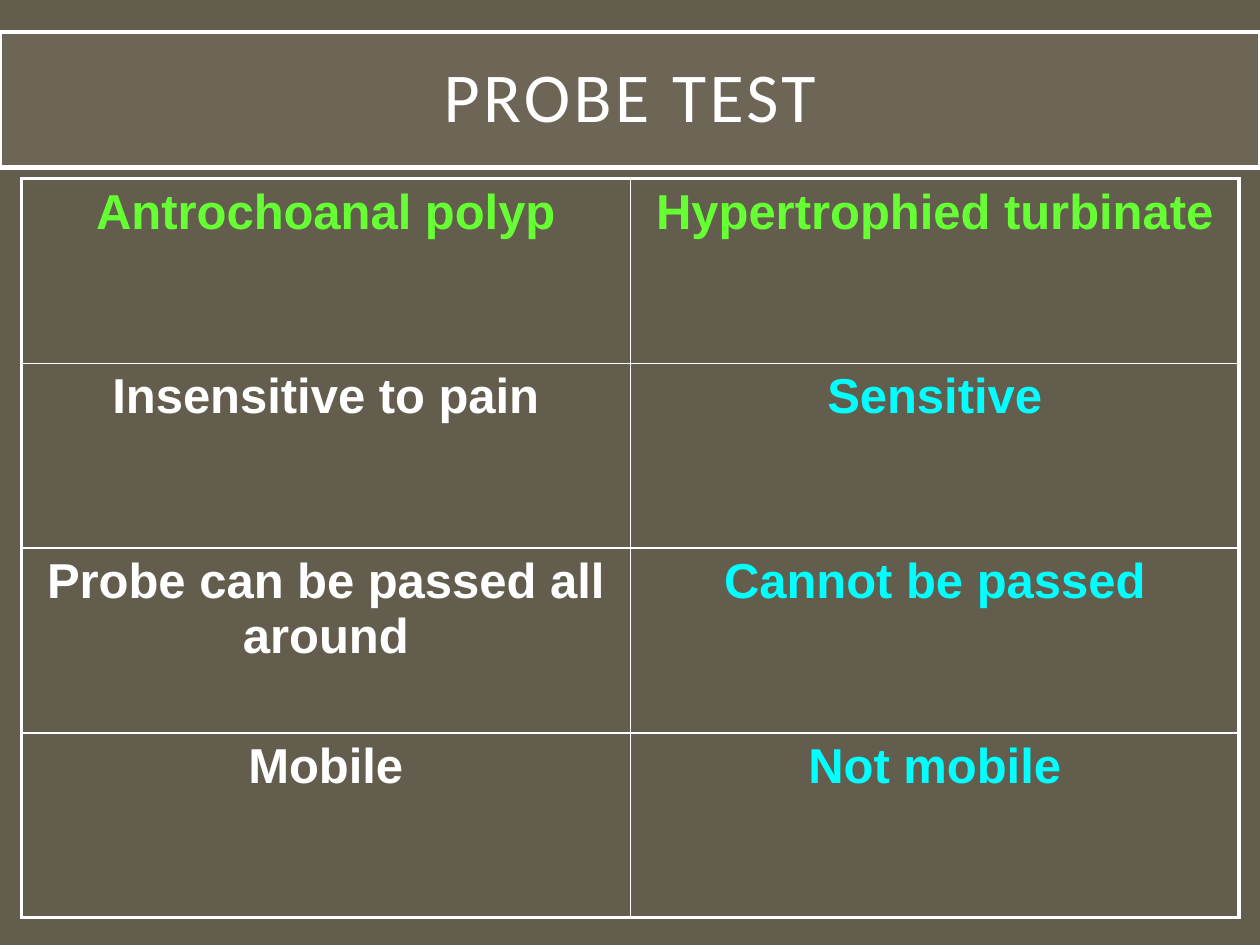
from lxml.etree import SubElement as Sub
from pptx import Presentation
from pptx.dml.color import RGBColor as RGB
from pptx.enum.text import MSO_ANCHOR as Anchor, MSO_AUTO_SIZE as Auto, PP_ALIGN as Align
from pptx.oxml import parse_xml
from pptx.oxml.ns import nsdecls, qn
from pptx.util import Cm, Pt

BACK = RGB(0x63, 0x5D, 0x4D)
BAND = RGB(0xA7, 0xA0, 0x8E)
WHITE = RGB(0xFF, 0xFF, 0xFF)
GREEN = RGB(0x66, 0xFF, 0x33)
CYAN = RGB(0x00, 0xFF, 0xFF)
THICK, THIN = 2.25, 1

ROWS = [
    ("Antrochoanal polyp", "Hypertrophied turbinate"),
    ("Insensitive to pain", "Sensitive"),
    ("Probe can be passed all around", "Cannot be passed"),
    ("Mobile", "Not mobile"),
]


def write(frame, text, font="Arial", size=28, color=WHITE, bold=False,
          track=0, lead=None):
    """Put one centred paragraph into a text frame."""
    para = frame.paragraphs[0]
    para.alignment = Align.CENTER
    para.space_before = Pt(0)
    para.line_spacing = lead
    run = para.add_run()
    run.text = text
    run.font.name = font
    run.font.size = Pt(size)
    run.font.bold = bold
    run.font.color.rgb = color
    if track:
        run.font._element.set("spc", str(track * 100))


def edge(cell, sides):
    """Draw the cell borders; sides maps L, R, T, B to widths in points."""
    props = cell._tc.get_or_add_tcPr()
    for spot, side in enumerate("LRTB"):
        props.insert(spot, parse_xml(
            f'<a:ln{side} {nsdecls("a")} w="{Pt(sides[side])}"><a:solidFill>'
            f'<a:srgbClr val="{WHITE}"/></a:solidFill></a:ln{side}>'))


def add_title(slide, text, left, top, width, height):
    title = slide.shapes.title
    title.left, title.top, title.width, title.height = left, top, width, height
    # Pale see-through band with a white outline
    title.fill.solid()
    title.fill.fore_color.rgb = BAND
    tint = title.fill._xPr.find(".//" + qn("a:srgbClr"))
    Sub(tint, qn("a:alpha"), val="15000")
    title.line.color.rgb = WHITE
    title.line.width = Pt(2.5)
    # Title text
    frame = title.text_frame
    frame.word_wrap = True
    frame.auto_size = Auto.NONE
    frame.vertical_anchor = Anchor.MIDDLE
    frame.margin_left = frame.margin_right = Cm(0.5)
    frame.margin_top = frame.margin_bottom = Cm(0.5)
    write(frame, text, font="Calibri", size=40, track=2, lead=0.9)


def add_grid(slide, rows, left, top, width, height):
    high, wide = len(rows), len(rows[0])
    table = slide.shapes.add_table(high, wide, left, top, width, height).table
    table.first_row = table.horz_banding = False
    for r, row in enumerate(rows):
        for c, text in enumerate(row):
            cell = table.cell(r, c)
            cell.fill.background()
            color = GREEN if r == 0 else (WHITE, CYAN)[c]
            write(cell.text_frame, text, color=color, bold=True)
            # Thick outer frame, thin inner lines
            outer = {"L": c == 0, "R": c == wide - 1,
                     "T": r == 0, "B": r == high - 1}
            edge(cell, {s: THICK if out else THIN for s, out in outer.items()})


def main():
    deck = Presentation()
    deck.slide_width, deck.slide_height = Cm(25.4), Cm(19.05)
    slide = deck.slides.add_slide(deck.slide_layouts[5])
    slide.background.fill.solid()
    slide.background.fill.fore_color.rgb = BACK
    add_title(slide, "PROBE TEST", Cm(0), Cm(0.64), Cm(25.4), Cm(2.74))
    add_grid(slide, ROWS, Cm(0.43), Cm(3.6), Cm(24.55), Cm(14.9))
    deck.save("out.pptx")


if __name__ == "__main__":
    main()
